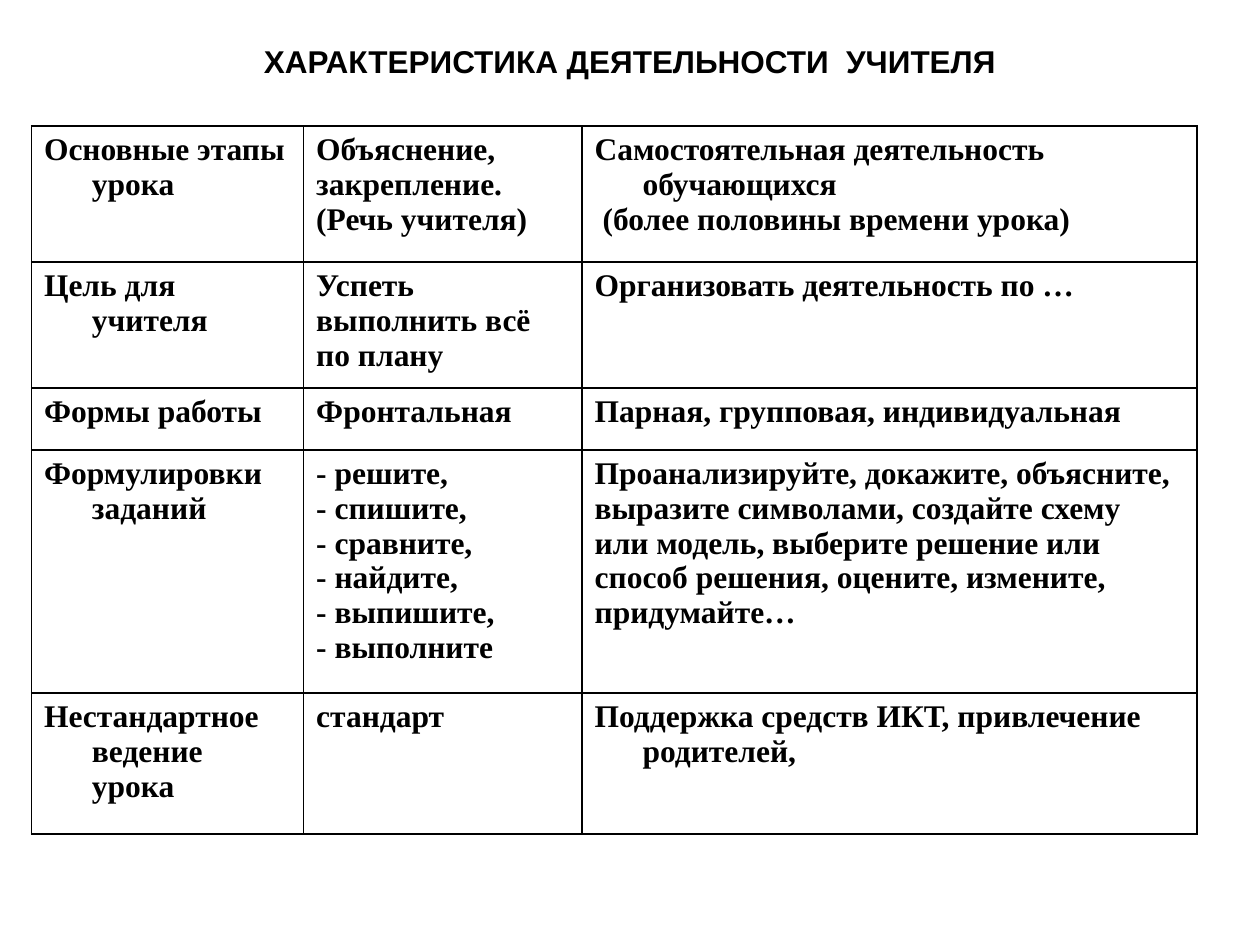
"""Build the slide that compares the teacher's activity at each lesson stage."""
import lxml.etree
import pptx
import pptx.dml.color
import pptx.enum.text
import pptx.oxml.ns
import pptx.util

PX = 9144
INDENT = 38
COLORS = {"text": "000000", "border": "000000", "fill": "FFFFFF"}
COLUMN_WIDTHS = [216, 221, 488]
ROW_HEIGHTS = [108, 100, 49, 193, 112]
ROWS = [
    ["Основные этапы урока",
     "Объяснение,\nзакрепление.\n(Речь учителя)",
     "Самостоятельная деятельность обучающихся\n (более половины времени урока)"],
    ["Цель для учителя",
     "Успеть\nвыполнить всё\nпо плану",
     "Организовать деятельность по …"],
    ["Формы работы", "Фронтальная", "Парная, групповая, индивидуальная"],
    ["Формулировки заданий",
     "- решите,\n- спишите,\n- сравните,\n- найдите,\n- выпишите,\n- выполните",
     "Проанализируйте, докажите, объясните,\nвыразите символами, создайте схему\n"
     "или модель, выберите решение или\nспособ решения, оцените, измените,\nпридумайте…"],
    ["Нестандартное ведение урока",
     "стандарт",
     "Поддержка средств ИКТ, привлечение родителей,"],
]


def format_runs(para, font_name):
    for span in para.runs:
        span.font.name = font_name
        span.font.size = pptx.util.Pt(18)
        span.font.bold = True
        span.font.color.rgb = pptx.dml.color.RGBColor.from_string(COLORS["text"])


def add_borders(cell):
    properties = cell._tc.get_or_add_tcPr()
    for position, side in enumerate(["lnL", "lnR", "lnT", "lnB"]):
        line = lxml.etree.Element(pptx.oxml.ns.qn(f"a:{side}"), w=str(pptx.util.Pt(1)))
        solid = lxml.etree.SubElement(line, pptx.oxml.ns.qn("a:solidFill"))
        lxml.etree.SubElement(solid, pptx.oxml.ns.qn("a:srgbClr"), val=COLORS["border"])
        properties.insert(position, line)


deck = pptx.Presentation()
deck.slide_width = 1000 * PX
deck.slide_height = 750 * PX
page = deck.slides.add_slide(deck.slide_layouts[6])

title_box = page.shapes.add_textbox(50 * PX, 30 * PX, 900 * PX, 37 * PX)
title_frame = title_box.text_frame
title_frame.word_wrap = True
title_frame.vertical_anchor = pptx.enum.text.MSO_ANCHOR.MIDDLE
title_frame.text = "ХАРАКТЕРИСТИКА ДЕЯТЕЛЬНОСТИ  УЧИТЕЛЯ"
title_frame.paragraphs[0].alignment = pptx.enum.text.PP_ALIGN.CENTER
format_runs(title_frame.paragraphs[0], "Arial")

table = page.shapes.add_table(
    len(ROWS), len(COLUMN_WIDTHS), 25 * PX, 100 * PX,
    sum(COLUMN_WIDTHS) * PX, sum(ROW_HEIGHTS) * PX,
).table
table.first_row = False
table.horz_banding = False
for column, width in zip(table.columns, COLUMN_WIDTHS):
    column.width = width * PX

for row, height, texts in zip(table.rows, ROW_HEIGHTS, ROWS):
    row.height = height * PX
    for cell, text in zip(row.cells, texts):
        cell.fill.solid()
        cell.fill.fore_color.rgb = pptx.dml.color.RGBColor.from_string(COLORS["fill"])
        add_borders(cell)
        cell.text_frame.text = text
        for para in cell.text_frame.paragraphs:
            if text != "стандарт":
                paragraph_properties = para._p.get_or_add_pPr()
                paragraph_properties.set("marL", str(INDENT * PX))
                paragraph_properties.set("indent", str(-INDENT * PX))
            format_runs(para, "Times New Roman")

deck.save("out.pptx")
